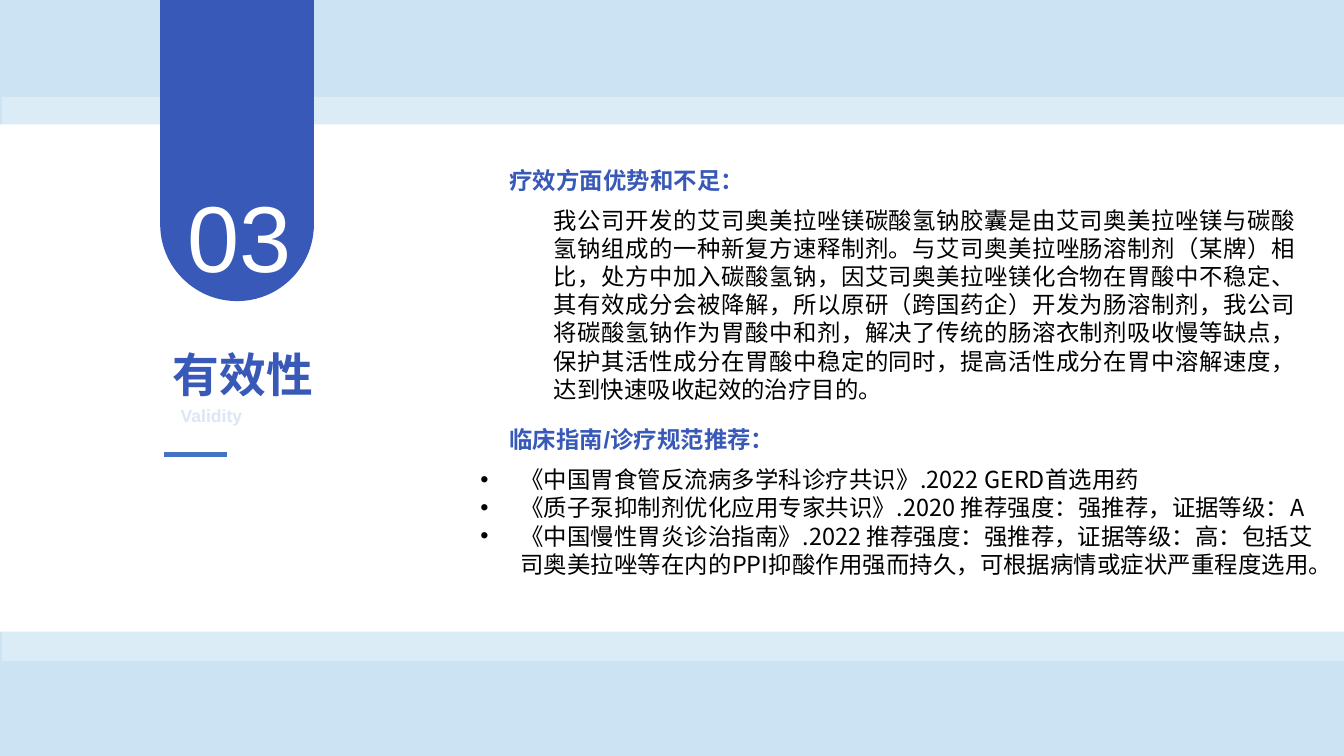
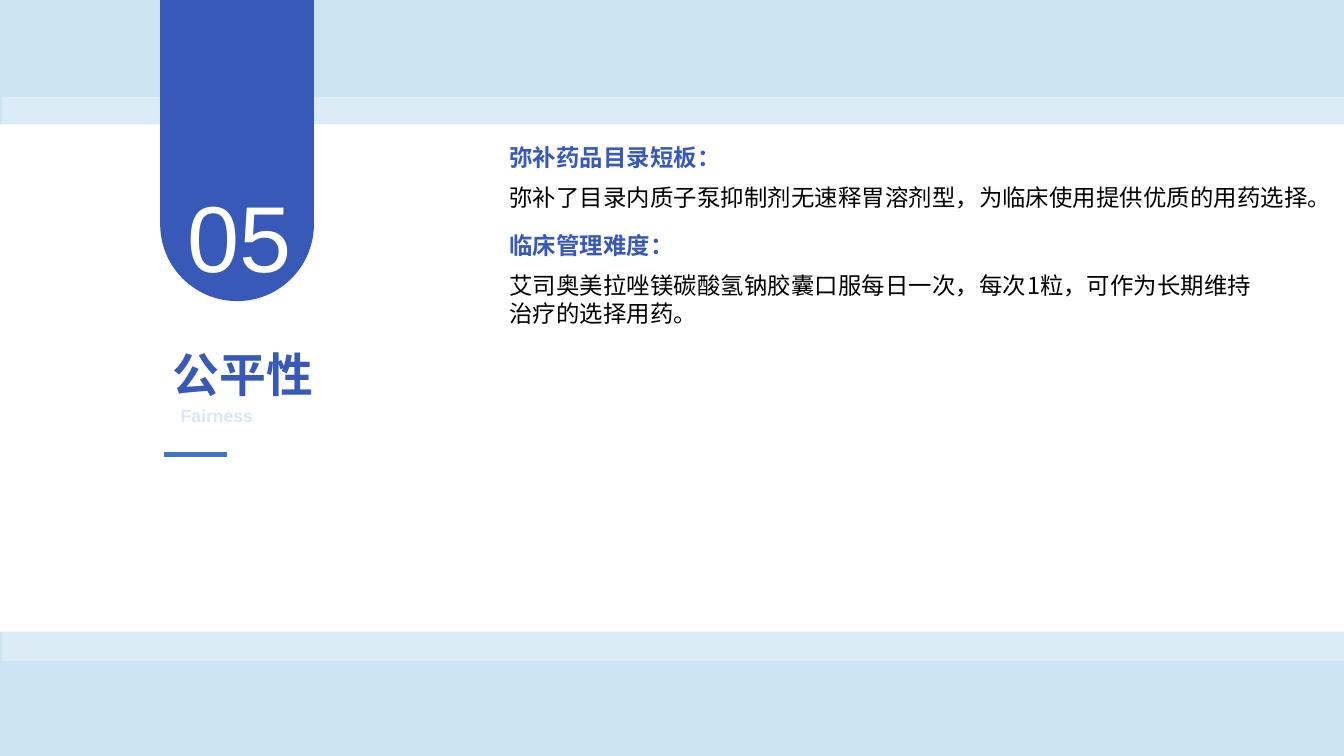
"""Build two section slides with a shared numbered ribbon and pale blue bands."""
from lxml.etree import SubElement
from pptx import Presentation
from pptx.dml.color import RGBColor
from pptx.enum.shapes import MSO_CONNECTOR, MSO_SHAPE
from pptx.enum.text import MSO_ANCHOR, MSO_AUTO_SIZE, PP_ALIGN
from pptx.oxml.ns import qn
from pptx.util import Inches, Pt

SKY = RGBColor(0xCC, 0xE3, 0xF3)
PALE = RGBColor(0xDC, 0xEC, 0xF7)
FAINT = RGBColor(0xDC, 0xE6, 0xF5)
WHITE = RGBColor(0xFF, 0xFF, 0xFF)
BLACK = RGBColor(0x00, 0x00, 0x00)
ROYAL = RGBColor(0x38, 0x59, 0xB8)
RULE = RGBColor(0x44, 0x72, 0xC4)
LATIN = "Arial"
CJK = "Noto Sans CJK SC"


def write(shape, *lines, size=8, color=BLACK, font=CJK, bold=False,
          align=PP_ALIGN.LEFT, anchor=MSO_ANCHOR.TOP, spacing=None,
          wrap=True, hanging=0):
    frame = shape.text_frame
    frame.auto_size = MSO_AUTO_SIZE.NONE
    frame.word_wrap = wrap
    frame.vertical_anchor = anchor
    frame.text = "\n".join(lines)
    for paragraph in frame.paragraphs:
        paragraph.alignment = align
        paragraph.space_before = Pt(0)
        if spacing:
            paragraph.line_spacing = Pt(spacing)
        if hanging:
            properties = paragraph._p.get_or_add_pPr()
            properties.set("marL", str(Inches(hanging)))
            properties.set("indent", str(-Inches(hanging)))
        for run in paragraph.runs:
            run.font.size = Pt(size)
            run.font.bold = bold
            run.font.name = font
            run.font.color.rgb = color
            SubElement(run._r.get_or_add_rPr(), qn("a:ea"), typeface=CJK)


def place(shape, left, top, width, height):
    shape.left, shape.top = Inches(left), Inches(top)
    shape.width, shape.height = Inches(width), Inches(height)


presentation = Presentation()
presentation.slide_width = Inches(6.38)
presentation.slide_height = Inches(3.59)
master = presentation.slide_master
master.background.fill.solid()
master.background.fill.fore_color.rgb = SKY
place(master.placeholders[0], 0.72, 1.59, 0.94, 0.37)

BODY = {"spacing": 9.6}
HEADING = {**BODY, "font": LATIN, "color": ROYAL, "bold": True}
JUSTIFIED = {**BODY, "align": PP_ALIGN.JUSTIFY}

validity_texts = [
    ((2.32, 0.74, 1.36, 0.23), "疗效方面优势和不足：", HEADING),
    ((2.53, 0.93, 3.72, 1.04),
     "我公司开发的艾司奥美拉唑镁碳酸氢钠胶囊是由艾司奥美拉唑镁与碳酸氢钠组成的一种新复方速释制剂。"
     "与艾司奥美拉唑肠溶制剂（某牌）相比，处方中加入碳酸氢钠，因艾司奥美拉唑镁化合物在胃酸中不稳定、"
     "其有效成分会被降解，所以原研（跨国药企）开发为肠溶制剂，我公司将碳酸氢钠作为胃酸中和剂，"
     "解决了传统的肠溶衣制剂吸收慢等缺点，保护其活性成分在胃酸中稳定的同时，"
     "提高活性成分在胃中溶解速度，达到快速吸收起效的治疗目的。", JUSTIFIED),
    ((2.32, 1.97, 1.79, 0.23), "临床指南/诊疗规范推荐：", HEADING),
]
guidelines = [
    "《中国胃食管反流病多学科诊疗共识》.2022 GERD首选用药",
    "《质子泵抑制剂优化应用专家共识》.2020 推荐强度：强推荐，证据等级：A",
    "《中国慢性胃炎诊治指南》.2022 推荐强度：强推荐，证据等级：高：包括"
    "艾司奥美拉唑等在内的PPI抑酸作用强而持久，可根据病情或症状严重程度选用。",
]
fairness_texts = [
    ((2.32, 0.63, 2.83, 0.23), "弥补药品目录短板：", HEADING),
    ((2.32, 0.82, 4.12, 0.23),
     "弥补了目录内质子泵抑制剂无速释胃溶剂型，为临床使用提供优质的用药选择。", BODY),
    ((2.32, 1.05, 2.83, 0.23), "临床管理难度：", HEADING),
    ((2.32, 1.24, 3.75, 0.37),
     "艾司奥美拉唑镁碳酸氢钠胶囊口服每日一次，每次1粒，可作为长期维持治疗的选择用药。", BODY),
]
sections = [
    ("03", "有效性", "Validity", validity_texts, guidelines),
    ("05", "公平性", "Fairness", fairness_texts, []),
]

for number, title, subtitle, texts, bullets in sections:
    layout = presentation.slide_layouts[1 if bullets else 5]
    slide = presentation.slides.add_slide(layout)
    write(slide.shapes.title, title, size=16, color=ROYAL, font=LATIN, bold=True,
          anchor=MSO_ANCHOR.MIDDLE)
    number_box = slide.shapes.add_textbox(
        Inches(0.79), Inches(0.8), Inches(0.69), Inches(0.64))
    write(number_box, number, size=32, color=WHITE, font=LATIN,
          align=PP_ALIGN.CENTER, wrap=False)
    subtitle_box = slide.shapes.add_textbox(
        Inches(0.76), Inches(1.86), Inches(0.9), Inches(0.23))
    write(subtitle_box, subtitle, size=6, color=FAINT, font=LATIN, bold=True,
          anchor=MSO_ANCHOR.MIDDLE)
    for box, text, style in texts:
        write(slide.shapes.add_textbox(*map(Inches, box)), text, **style)
    if bullets:
        guideline_list = slide.placeholders[1]
        place(guideline_list, 2.18, 2.16, 4.22, 0.77)
        write(guideline_list, *bullets, hanging=0.19, **BODY)

shapes = presentation.slides[0].shapes
decorations = []
for kind, box, color in [
    (MSO_SHAPE.RECTANGLE, (0.01, 0.46, 6.37, 2.68), PALE),
    (MSO_SHAPE.RECTANGLE, (0, 0.59, 6.38, 2.41), WHITE),
    (MSO_SHAPE.ROUND_2_SAME_RECTANGLE, (0.76, -0.01, 0.73, 1.44), ROYAL),
]:
    shape = shapes.add_shape(kind, *map(Inches, box))
    shape.shadow.inherit = False
    shape.fill.solid()
    shape.fill.fore_color.rgb = color
    shape.line.fill.background()
    decorations.append(shape)
ribbon = decorations[-1]
ribbon.adjustments[0] = 0.5
ribbon.rotation = 180

title_rule = shapes.add_connector(
    MSO_CONNECTOR.STRAIGHT, Inches(0.78), Inches(2.16), Inches(1.08), Inches(2.16))
title_rule.line.color.rgb = RULE
title_rule.line.width = Pt(1.75)
SubElement(title_rule._element.spPr, qn("a:effectLst"))
decorations.append(title_rule)

for shape_id, shape in enumerate(decorations, start=20):
    shape._element.xpath(".//p:cNvPr")[0].set("id", str(shape_id))
    master.shapes._spTree.append(shape._element)

presentation.save("out.pptx")
